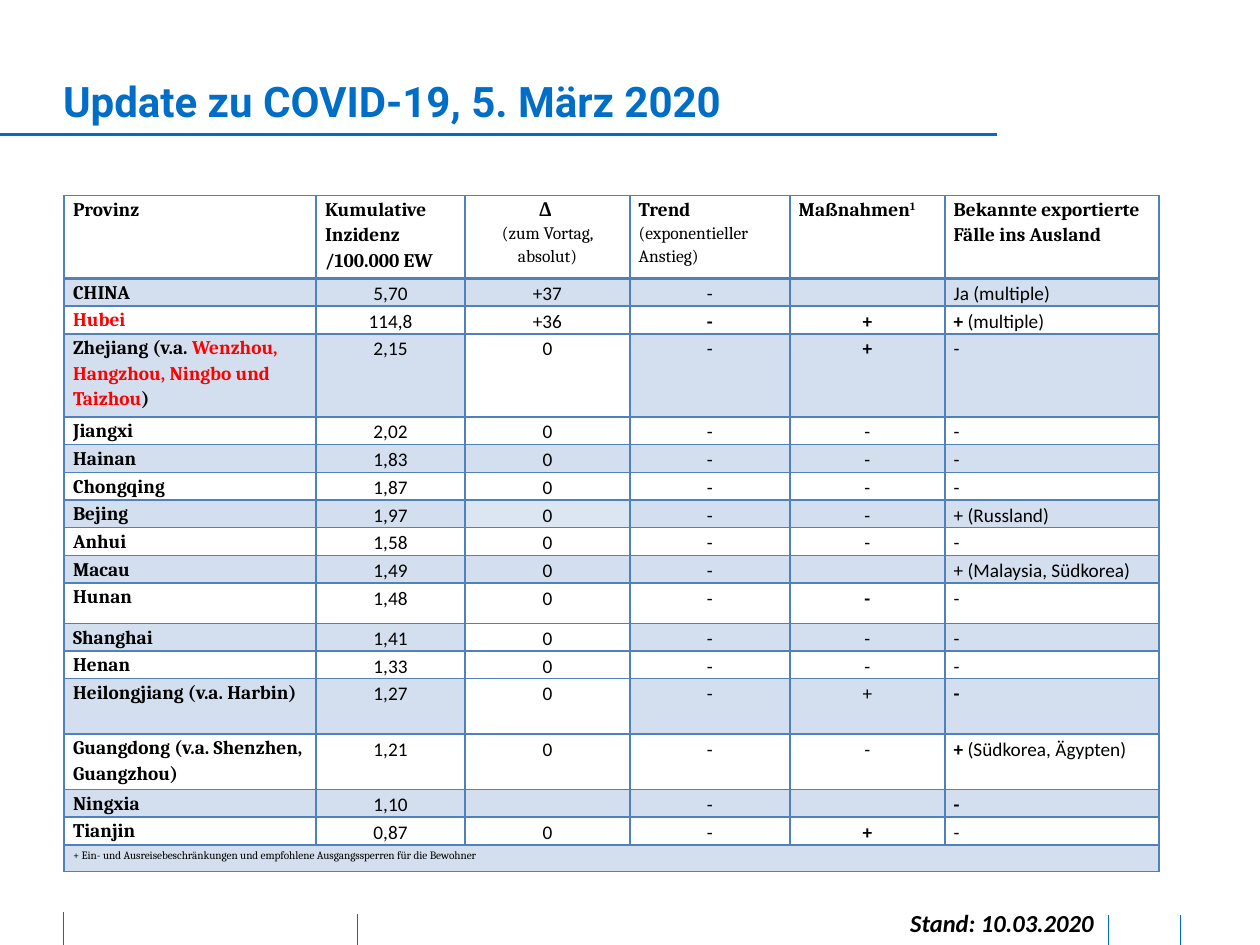
import pptx
import pptx.util
import pptx.dml.color
import pptx.enum.shapes
import pptx.enum.text
import pptx.oxml.ns
from lxml import etree

Inches = pptx.util.Inches
Pt = pptx.util.Pt
ALIGN = pptx.enum.text.PP_ALIGN
qn = pptx.oxml.ns.qn

BLUE = "006EC7"
BORDER = "4F81BD"
BAND = "D3DFEE"
WHITE = "FFFFFF"
BLACK = "000000"

STYLES = {
    "name": ("Cambria", 11, BLACK, True, False),
    "affected": ("Cambria", 11, "FF0000", True, False),
    "detail": ("Cambria", 10, BLACK, False, False),
    "footnote": ("Cambria", 11, BLACK, False, False),
    "value": ("Calibri", 11, BLACK, False, False),
    "strong": ("Calibri", 11, BLACK, True, False),
    "title": ("Roboto", 24, BLUE, True, False),
    "status": ("Calibri", 14, BLACK, True, True),
}

COLUMN_WIDTHS = [2, 1.18, 1.31, 1.27, 1.23, 1.7]
ROW_HEIGHT = 0.22
TALL_ROWS = {0: 0.66, 3: 0.66, 10: 0.32, 13: 0.44, 14: 0.44, 17: 0.21}
DELTA_FILLS = {3: WHITE, 7: "DCE6F2", 11: WHITE, 13: WHITE, 14: WHITE}

PLUS = [("+", "strong")]
MINUS = [("-", "strong")]

HEADERS = [
    [[("Provinz", "name")]],
    [[("Kumulative Inzidenz /100.000 EW", "name")]],
    [[("Δ ", "name")], [("(zum Vortag, absolut)", "detail")]],
    [[("Trend", "name")], [("(exponentieller Anstieg)", "detail")]],
    [[("Maßnahmen", "name"), ("1", "name", 30)]],
    [[("Bekannte exportierte Fälle ins Ausland", "name")]],
]

PROVINCES = [
    ("CHINA", "5,70", "+37", "-", "", "Ja (multiple)"),
    ([("Hubei", "affected")], "114,8", "+36", MINUS, PLUS,
     PLUS + [(" (multiple)", "value")]),
    ([("Zhejiang (v.a. ", "name"),
      ("Wenzhou, Hangzhou, Ningbo und Taizhou", "affected"),
      (")", "name")], "2,15", "0", "-", PLUS, "-"),
    ("Jiangxi", "2,02", "0", "-", "-", "-"),
    ("Hainan", "1,83", "0", "-", "-", "-"),
    ("Chongqing", "1,87", "0", "-", "-", "-"),
    ("Bejing", "1,97", "0", "-", "-", "+ (Russland)"),
    ("Anhui", "1,58", "0", "-", "-", "-"),
    ("Macau", "1,49", "0", "-", "", "+ (Malaysia, Südkorea)"),
    ("Hunan", "1,48", "0", "-", MINUS, "-"),
    ("Shanghai", "1,41", "0", "-", "-", "-"),
    ("Henan", "1,33", "0", "-", "-", "-"),
    ("Heilongjiang (v.a. Harbin)", "1,27", "0", "-", "+", MINUS),
    ("Guangdong (v.a. Shenzhen, Guangzhou)", "1,21", "0", "-", "-",
     PLUS + [(" (Südkorea, Ägypten)", "value")]),
    ("Ningxia", "1,10", "", "-", "", MINUS),
    ("Tianjin", "0,87", "0", "-", PLUS, "-"),
]
FOOTNOTE = "+ Ein- und Ausreisebeschränkungen und empfohlene Ausgangssperren für die Bewohner"


def color(hex_value):
    return pptx.dml.color.RGBColor.from_string(hex_value)


def add_run(paragraph, text, style, baseline=0):
    family, size, text_color, bold, italic = STYLES[style]
    run = paragraph.add_run()
    run.text = text
    run.font.name = family
    run.font.size = Pt(size)
    run.font.bold = bold
    run.font.italic = italic
    run.font.color.rgb = color(text_color)
    if baseline:
        run.font._element.set("baseline", str(baseline * 1000))


def add_rule(slide, start, end, width):
    rule = slide.shapes.add_connector(
        pptx.enum.shapes.MSO_CONNECTOR.STRAIGHT,
        Inches(start[0]), Inches(start[1]), Inches(end[0]), Inches(end[1]))
    rule.line.color.rgb = color(BLUE)
    rule.line.width = Pt(width)
    etree.SubElement(rule._element.spPr, qn("a:effectLst"))


def set_borders(cell, top, bottom):
    properties = cell._tc.get_or_add_tcPr()
    widths = {"a:lnL": 1, "a:lnR": 1, "a:lnT": top, "a:lnB": bottom}
    for index, (side, width) in enumerate(widths.items()):
        line = etree.Element(qn(side), w=str(Pt(width)))
        fill = etree.SubElement(line, qn("a:solidFill"))
        etree.SubElement(fill, qn("a:srgbClr"), val=BORDER)
        properties.insert(index, line)


def format_cell(cell, row, column):
    cell.margin_left = cell.margin_right = Inches(0.07)
    cell.margin_top = cell.margin_bottom = 0
    if row % 2:
        fill = BAND
    else:
        fill = None
    if column == 2:
        fill = DELTA_FILLS.get(row, fill)
    if fill:
        cell.fill.solid()
        cell.fill.fore_color.rgb = color(fill)
    else:
        cell.fill.background()
    set_borders(cell, 2.25 if row == 1 else 1, 2.25 if row == 0 else 1)


def fill_cell(cell, paragraphs, alignment):
    frame = cell.text_frame
    for index, runs in enumerate(paragraphs):
        paragraph = frame.add_paragraph() if index else frame.paragraphs[0]
        paragraph.alignment = alignment
        paragraph.line_spacing = 1.15
        for run in runs:
            add_run(paragraph, *run)
        if not runs:
            etree.SubElement(paragraph._p, qn("a:endParaRPr"), sz="1100")


def province_runs(content, column):
    if not isinstance(content, str):
        return content
    if not content:
        return []
    return [(content, "value" if column else "name")]


def add_province_table(slide):
    row_count = len(PROVINCES) + 2
    heights = [TALL_ROWS.get(row, ROW_HEIGHT) for row in range(row_count)]
    table = slide.shapes.add_table(
        row_count, len(COLUMN_WIDTHS), Inches(0.51), Inches(1.55),
        Inches(sum(COLUMN_WIDTHS)), Inches(sum(heights))).table
    table.first_row = False
    table.horz_banding = False
    for column, width in enumerate(COLUMN_WIDTHS):
        table.columns[column].width = Inches(width)
    for row, height in enumerate(heights):
        table.rows[row].height = Inches(height)
        for column in range(len(COLUMN_WIDTHS)):
            format_cell(table.cell(row, column), row, column)

    for column, paragraphs in enumerate(HEADERS):
        alignment = ALIGN.CENTER if column == 2 else ALIGN.LEFT
        fill_cell(table.cell(0, column), paragraphs, alignment)
    for row, province in enumerate(PROVINCES, 1):
        for column, content in enumerate(province):
            alignment = ALIGN.CENTER if 1 <= column <= 4 else ALIGN.LEFT
            fill_cell(table.cell(row, column),
                      [province_runs(content, column)], alignment)

    footnote = table.cell(row_count - 1, 0)
    footnote.merge(table.cell(row_count - 1, len(COLUMN_WIDTHS) - 1))
    fill_cell(footnote, [[(FOOTNOTE, "footnote", 30)]], ALIGN.LEFT)
    footnote.text_frame.paragraphs[0].space_after = Pt(6)


def place_title(slide):
    title = slide.shapes.title
    title.left, title.top = Inches(0.5), Inches(0.6)
    title.width, title.height = Inches(8.85), Inches(0.4)
    frame = title.text_frame
    frame.margin_left = frame.margin_right = 0
    frame.margin_top = frame.margin_bottom = 0
    frame.auto_size = pptx.enum.text.MSO_AUTO_SIZE.SHAPE_TO_FIT_TEXT
    frame.paragraphs[0].alignment = ALIGN.LEFT
    add_run(frame.paragraphs[0], "Update zu COVID-19, 5. März 2020", "title")


def add_status(slide):
    status = slide.shapes.add_textbox(
        Inches(6.65), Inches(7.16), Inches(2.13), Inches(0.34))
    frame = status.text_frame
    frame.word_wrap = True
    frame.auto_size = pptx.enum.text.MSO_AUTO_SIZE.SHAPE_TO_FIT_TEXT
    frame.paragraphs[0].alignment = ALIGN.RIGHT
    add_run(frame.paragraphs[0], "Stand: 10.03.2020", "status")


def main():
    presentation = pptx.Presentation()
    presentation.slide_width = Inches(10)
    presentation.slide_height = Inches(7.5)
    slide = presentation.slides.add_slide(presentation.slide_layouts[5])
    for left, top in [(2.84, 7.25), (0.5, 7.24), (9.37, 7.26), (8.8, 7.26)]:
        add_rule(slide, (left, top), (left, 7.5), 0.5)
    place_title(slide)
    add_rule(slide, (0, 1.07), (7.91, 1.07), 1.5)
    add_status(slide)
    add_province_table(slide)
    presentation.save("out.pptx")


if __name__ == "__main__":
    main()
